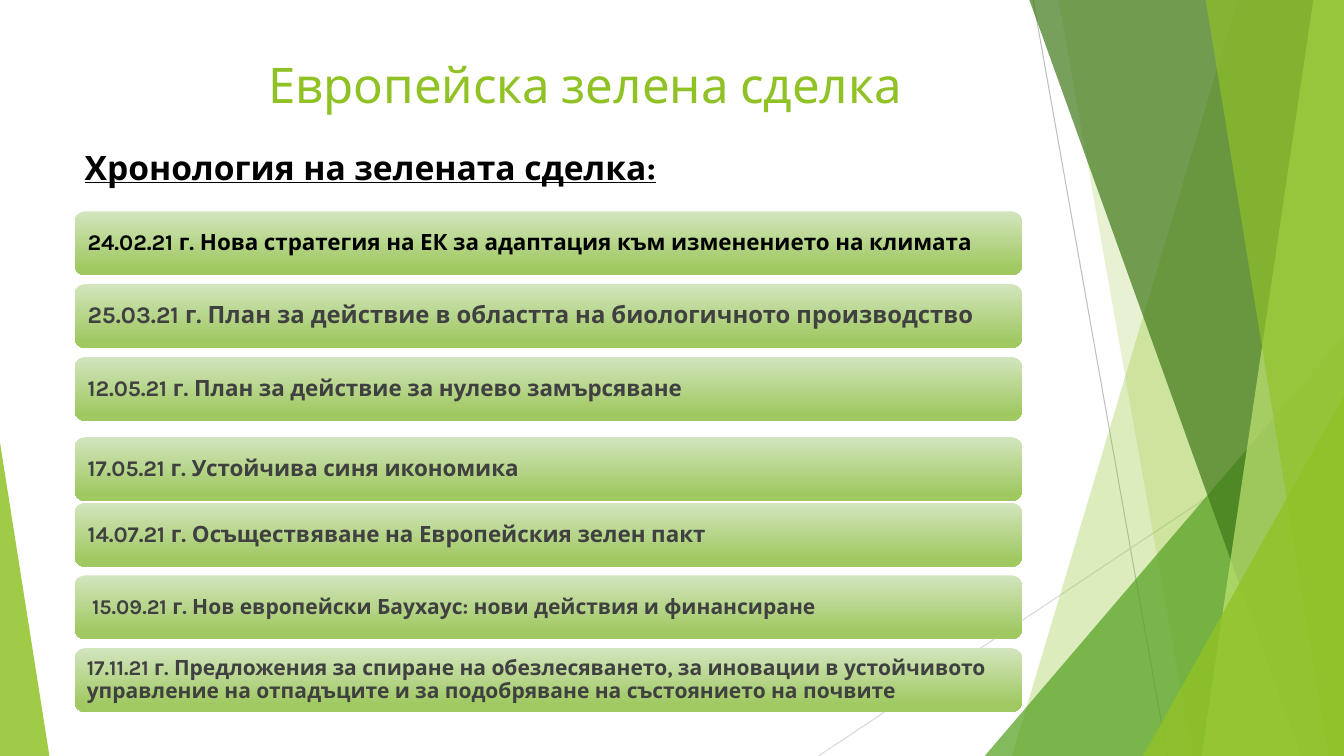
from dataclasses import dataclass

from lxml import etree
from pptx import Presentation
from pptx.dml.color import RGBColor
from pptx.enum.shapes import MSO_CONNECTOR, MSO_SHAPE
from pptx.enum.text import MSO_ANCHOR, MSO_AUTO_SIZE, PP_ALIGN
from pptx.oxml.ns import qn
from pptx.slide import Slide
from pptx.text.text import TextFrame
from pptx.util import Pt

STRAIGHT = MSO_CONNECTOR.STRAIGHT
TRIANGLE = MSO_SHAPE.ISOSCELES_TRIANGLE
ROUNDED = MSO_SHAPE.ROUNDED_RECTANGLE
TOP, MIDDLE = MSO_ANCHOR.TOP, MSO_ANCHOR.MIDDLE
LEFT, CENTER = PP_ALIGN.LEFT, PP_ALIGN.CENTER
NO_AUTOFIT = MSO_AUTO_SIZE.NONE

BLACK = RGBColor(0x00, 0x00, 0x00)
DARK_GREY = RGBColor(0x40, 0x40, 0x40)
LIME = RGBColor(0x90, 0xC2, 0x26)
PALE_LIME = RGBColor(0xC0, 0xE4, 0x74)
GREEN = RGBColor(0x54, 0xA0, 0x21)
FOREST = RGBColor(0x3F, 0x78, 0x19)
BAR_TOP = RGBColor(0xD3, 0xE5, 0xBE)
BAR_BOTTOM = RGBColor(0xA0, 0xC9, 0x62)
GREY = RGBColor(0xBF, 0xBF, 0xBF)
LIGHT_GREY = RGBColor(0xD9, 0xD9, 0xD9)

FONT = "Karla"
WIDTH, HEIGHT = 960, 540
BAR_LEFT, BAR_WIDTH, BAR_HEIGHT = 53.3, 676.8, 45.6


@dataclass
class Ray:
    start: tuple[float, float]
    end: tuple[float, float]
    color: RGBColor


@dataclass
class Band:
    top_x: float
    bottom_x: float
    color: RGBColor
    opacity: int


@dataclass
class Wedge:
    left: float
    top: float
    width: float
    apex: float
    color: RGBColor
    opacity: int


@dataclass
class Event:
    top: float
    text: str
    size: float = 16
    color: RGBColor = DARK_GREY
    inset: float = 7.2


RAYS = [
    Ray((738, 0), (833.8, HEIGHT), GREY),
    Ray((WIDTH, 290.2), (584.6, HEIGHT), LIGHT_GREY),
]
FACETS = [
    Band(884.2, 722.9, LIME, 30),
    Band(756, 851.8, LIME, 20),
    Wedge(703.4, 239.8, 256.6, 1, GREEN, 72),
    Band(735.1, 929.5, FOREST, 70),
    Band(938.2, 858.2, PALE_LIME, 70),
    Band(861.1, 949, LIME, 65),
    Wedge(816.5, 283, 143.5, 1, LIME, 80),
    Wedge(0, 316.1, 35.3, 0, LIME, 85),
]
EVENTS = [
    Event(151, "24.02.21 г. Нова стратегия на ЕК за адаптация към изменението на климата", color=BLACK),
    Event(203, "25.03.21 г. План за действие в областта на биологичното производство", size=17),
    Event(255, "12.05.21 г. План за действие за нулево замърсяване"),
    Event(312.3, "17.05.21 г. Устойчива синя икономика"),
    Event(359.2, "14.07.21 г. Осъществяване на Европейския зелен пакт"),
    Event(411, " 15.09.21 г. Нов европейски Баухаус: нови действия и финансиране", size=15, inset=6.5),
    Event(463, "17.11.21 г. Предложения за спиране на обезлесяването, за иновации в устойчивото "
          "управление на отпадъците и за подобряване на състоянието на почвите", size=15, inset=6.5),
]


def draw_ray(slide: Slide, ray: Ray) -> None:
    line = slide.shapes.add_connector(
        STRAIGHT, *(Pt(value) for value in ray.start + ray.end))
    line.line.color.rgb = ray.color
    line.line.width = Pt(0.75)
    etree.SubElement(line.element.spPr, qn("a:effectLst"))


def draw_facet(slide: Slide, facet: Band | Wedge) -> None:
    if isinstance(facet, Band):
        outline = slide.shapes.build_freeform(Pt(facet.top_x), Pt(-0.6), scale=1.0)
        corners = [(WIDTH, -0.6), (WIDTH, HEIGHT), (facet.bottom_x, HEIGHT)]
        outline.add_line_segments([(Pt(x), Pt(y)) for x, y in corners], close=True)
        shape = outline.convert_to_shape()
    else:
        shape = slide.shapes.add_shape(
            TRIANGLE, Pt(facet.left), Pt(facet.top), Pt(facet.width), Pt(HEIGHT - facet.top))
        shape.adjustments[0] = facet.apex
    shape.shadow.inherit = False
    shape.line.fill.background()
    shape.fill.solid()
    shape.fill.fore_color.rgb = facet.color
    color = shape.element.spPr.find(qn("a:solidFill"))[0]
    etree.SubElement(color, qn("a:alpha"), val=str(facet.opacity * 1000))


def write(frame: TextFrame, text: str, size: float, color: RGBColor, bold: bool = True,
          underline: bool = False, align: PP_ALIGN = LEFT, anchor: MSO_ANCHOR = TOP,
          spacing: float = 1.0) -> None:
    frame.word_wrap = True
    frame.auto_size = NO_AUTOFIT
    frame.vertical_anchor = anchor
    paragraph = frame.paragraphs[0]
    paragraph.alignment = align
    paragraph.line_spacing = spacing
    paragraph.space_before = Pt(0)
    run = paragraph.add_run()
    run.text = text
    run.font.name = FONT
    run.font.size = Pt(size)
    run.font.bold = bold
    run.font.underline = underline
    run.font.color.rgb = color


def draw_event(slide: Slide, event: Event) -> None:
    bar = slide.shapes.add_shape(
        ROUNDED, Pt(BAR_LEFT), Pt(event.top), Pt(BAR_WIDTH), Pt(BAR_HEIGHT))
    bar.shadow.inherit = False
    bar.line.fill.background()
    bar.fill.gradient()
    bar.fill.gradient_angle = 270
    for stop, color, position in zip(bar.fill.gradient_stops, (BAR_TOP, BAR_BOTTOM), (0, 0.88)):
        stop.color.rgb = color
        stop.position = position
    frame = bar.text_frame
    frame.margin_left = frame.margin_right = Pt(event.inset)
    frame.margin_top = frame.margin_bottom = Pt(event.inset)
    write(frame, event.text, event.size, event.color, anchor=MIDDLE, spacing=0.9)


def main() -> None:
    deck = Presentation()
    deck.slide_width, deck.slide_height = Pt(WIDTH), Pt(HEIGHT)
    slide = deck.slides.add_slide(deck.slide_layouts[5])

    for ray in RAYS:
        draw_ray(slide, ray)
    for facet in FACETS:
        draw_facet(slide, facet)

    chronology = slide.shapes.title
    chronology.left, chronology.top = Pt(53.3), Pt(101.5)
    chronology.width, chronology.height = Pt(648.7), Pt(49.7)
    write(chronology.text_frame, "Хронология на зелената сделка:", 24, BLACK, underline=True)

    for event in EVENTS:
        draw_event(slide, event)

    green_deal = slide.shapes.add_textbox(Pt(93.6), Pt(35.3), Pt(648.7), Pt(49.7))
    write(green_deal.text_frame, "Европейска зелена сделка", 35.1, LIME, bold=False, align=CENTER)

    deck.save("out.pptx")


if __name__ == "__main__":
    main()
